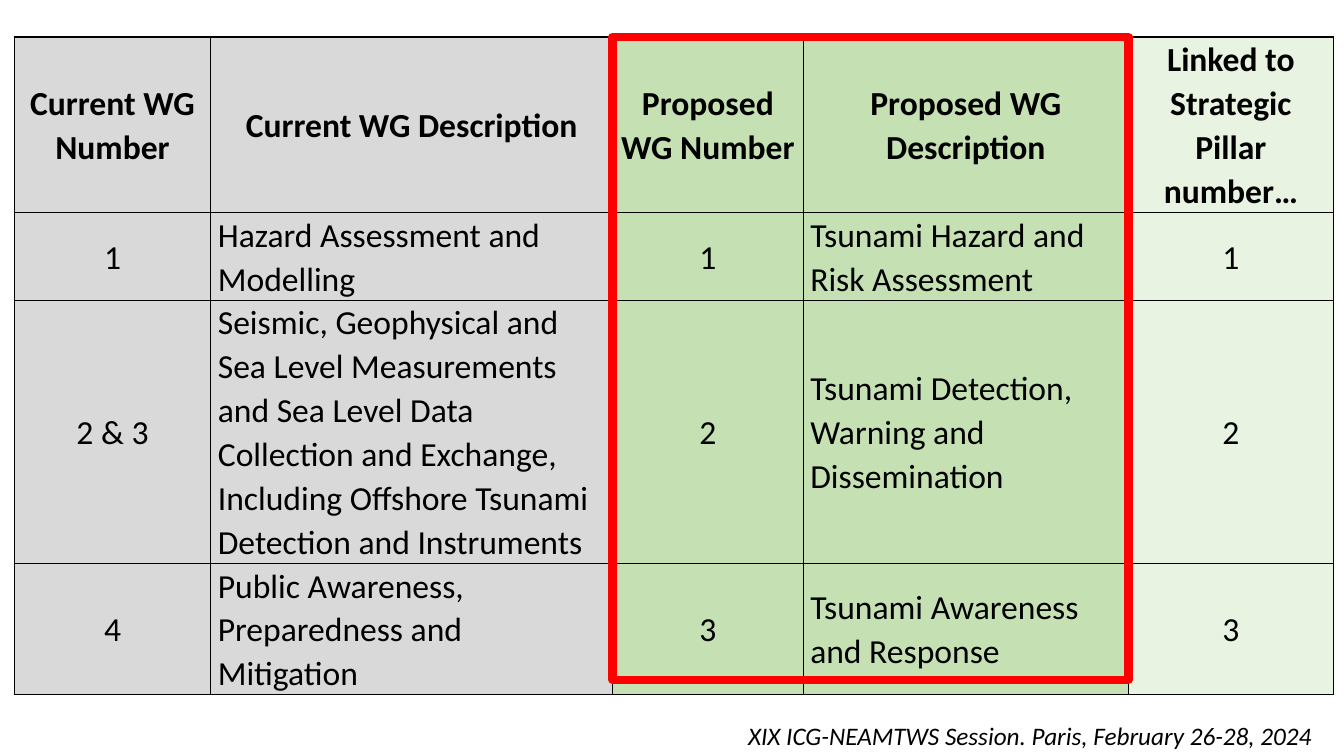
from lxml import etree
from pptx import Presentation
from pptx.dml.color import RGBColor
from pptx.enum.shapes import MSO_SHAPE
from pptx.enum.text import MSO_ANCHOR, PP_ALIGN
from pptx.oxml.ns import qn
from pptx.util import Cm, Pt

HEADERS = ["Current WG Number", "Current WG Description", "Proposed WG Number",
           "Proposed WG Description", "Linked to Strategic Pillar number…"]
WORKING_GROUPS = [
    ("1", "Hazard Assessment and Modelling",
     "1", "Tsunami Hazard and Risk Assessment", "1"),
    ("2 & 3", "Seismic, Geophysical and Sea Level Measurements and Sea Level Data "
     "Collection and Exchange, Including Offshore Tsunami Detection and Instruments",
     "2", "Tsunami Detection, Warning and Dissemination", "2"),
    ("4", "Public Awareness, Preparedness and Mitigation",
     "3", "Tsunami Awareness and Response", "3"),
]
FOOTER = "XIX ICG-NEAMTWS Session. Paris, February 26-28, 2024"

BLACK = RGBColor(0x00, 0x00, 0x00)
RED = RGBColor(0xFF, 0x00, 0x00)
GREY = RGBColor(0xD9, 0xD9, 0xD9)
GREEN = RGBColor(0xC5, 0xE0, 0xB3)
PALE_GREEN = RGBColor(0xE8, 0xF3, 0xE1)
COLUMN_FILLS = [GREY, GREY, GREEN, GREEN, PALE_GREEN]
DESCRIPTION_COLUMNS = (1, 3)

CENTER, LEFT = PP_ALIGN.CENTER, PP_ALIGN.LEFT
MIDDLE = MSO_ANCHOR.MIDDLE
RECTANGLE = MSO_SHAPE.RECTANGLE

TABLE_LEFT, TABLE_TOP = 0.36, 0.93
COLUMN_WIDTHS = [4.95, 10.13, 4.8, 8.2, 5.16]
ROW_HEIGHTS = [4.42, 2.2, 6.62, 3.3]
FRAME_HEIGHT = 16.2


def write_text(text_frame, text, size=24, bold=False, italic=False,
               align=CENTER, line_spacing=None, space_after=None):
    text_frame.word_wrap = True
    paragraph = text_frame.paragraphs[0]
    paragraph.alignment = align
    paragraph.line_spacing = line_spacing
    paragraph.space_after = space_after
    run = paragraph.add_run()
    run.text = text
    font = run.font
    font.name, font.size, font.color.rgb = "Calibri", Pt(size), BLACK
    font.bold, font.italic = bold, italic


def add_cell_borders(cell, color=BLACK, width=1):
    properties = cell._tc.get_or_add_tcPr()
    for position, side in enumerate(("a:lnL", "a:lnR", "a:lnT", "a:lnB")):
        line = etree.Element(qn(side), w=str(Pt(width)))
        fill = etree.SubElement(line, qn("a:solidFill"))
        etree.SubElement(fill, qn("a:srgbClr"), val=str(color))
        properties.insert(position, line)


def add_working_group_table(slide):
    rows = [HEADERS, *WORKING_GROUPS]
    table = slide.shapes.add_table(
        len(rows), len(HEADERS), Cm(TABLE_LEFT), Cm(TABLE_TOP),
        Cm(sum(COLUMN_WIDTHS)), Cm(sum(ROW_HEIGHTS))).table
    for column, width in zip(table.columns, COLUMN_WIDTHS):
        column.width = Cm(width)
    for row, height in zip(table.rows, ROW_HEIGHTS):
        row.height = Cm(height)
    for row_index, texts in enumerate(rows):
        is_header = row_index == 0
        for column_index, text in enumerate(texts):
            cell = table.cell(row_index, column_index)
            cell.vertical_anchor = MIDDLE
            cell.margin_left = cell.margin_right = Cm(0.18)
            cell.margin_top = cell.margin_bottom = 0
            cell.fill.solid()
            cell.fill.fore_color.rgb = COLUMN_FILLS[column_index]
            is_description = column_index in DESCRIPTION_COLUMNS and not is_header
            write_text(cell.text_frame, text, bold=is_header,
                       align=LEFT if is_description else CENTER,
                       line_spacing=1.07, space_after=Pt(8))
            add_cell_borders(cell)


def add_proposal_frame(slide):
    """Outline the two proposed working group columns in red."""
    left = TABLE_LEFT + sum(COLUMN_WIDTHS[:2])
    frame = slide.shapes.add_shape(RECTANGLE, Cm(left), Cm(TABLE_TOP),
                                   Cm(sum(COLUMN_WIDTHS[2:4])), Cm(FRAME_HEIGHT))
    frame.shadow.inherit = False
    frame.fill.background()
    frame.line.color.rgb = RED
    frame.line.width = Pt(6)


def main():
    presentation = Presentation()
    presentation.slide_width, presentation.slide_height = Cm(33.87), Cm(19.05)
    slide = presentation.slides.add_slide(presentation.slide_layouts[6])
    add_working_group_table(slide)
    add_proposal_frame(slide)
    footer = slide.shapes.add_textbox(Cm(18.11), Cm(18.03), Cm(15.7), Cm(1.02))
    write_text(footer.text_frame, FOOTER, size=18, italic=True)
    presentation.save("out.pptx")


if __name__ == "__main__":
    main()
